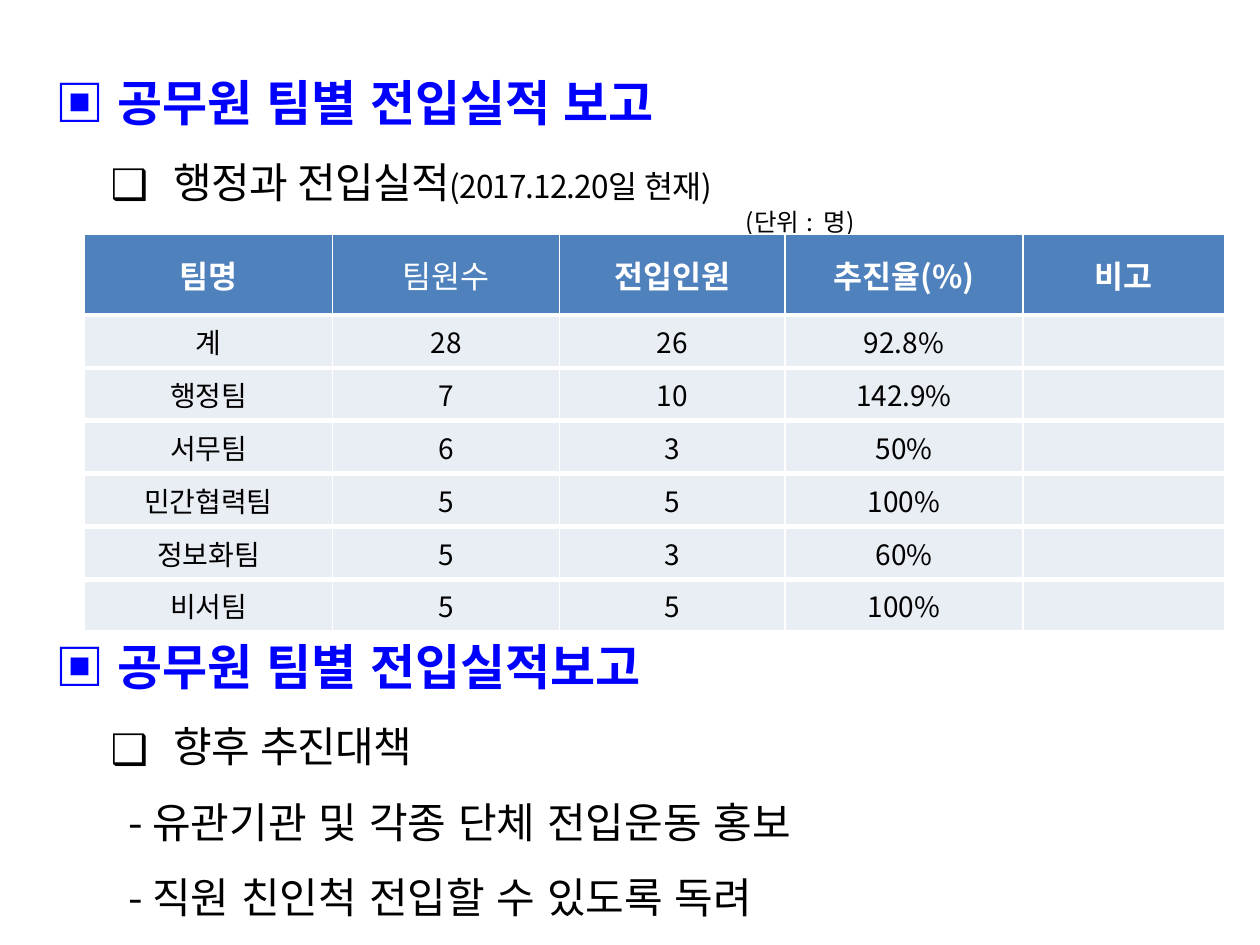
from lxml import etree
from pptx import Presentation
from pptx.dml.color import RGBColor
from pptx.enum.lang import MSO_LANGUAGE_ID
from pptx.enum.text import MSO_ANCHOR, PP_ALIGN
from pptx.oxml.ns import qn
from pptx.util import Inches, Pt

MIDDLE, CENTER = MSO_ANCHOR.MIDDLE, PP_ALIGN.CENTER
KOREAN = MSO_LANGUAGE_ID.KOREAN
FONT = "Noto Sans CJK KR"
COLORS = {"heading": "0000FF", "text": "000000", "white": "FFFFFF",
          "header": "4F81BD", "row": "E9EDF4"}

COL_WIDTHS = [1.97, 1.8, 1.79, 1.89, 1.6]
ROW_HEIGHTS = [0.64] + [0.42] * 6
ROWS = [
    ["팀명", "팀원수", "전입인원", "추진율(%)", "비고"],
    ["계", "28", "26", "92.8%", ""],
    ["행정팀", "7", "10", "142.9%", ""],
    ["서무팀", "6", "3", "50%", ""],
    ["민간협력팀", "5", "5", "100%", ""],
    ["정보화팀", "5", "3", "60%", ""],
    ["비서팀", "5", "5", "100%", ""],
]


def add_run(p, text, size, color="text", bold=False, spacing=None):
    r = p.add_run()
    r.text = text
    r.font.size, r.font.bold, r.font.name = Pt(size), bold, FONT
    r.font.language_id = KOREAN
    r.font.color.rgb = RGBColor.from_string(COLORS[color])
    rPr = r._r.get_or_add_rPr()
    etree.SubElement(rPr, qn("a:ea")).set("typeface", FONT)
    if spacing is not None:
        rPr.set("spc", str(spacing))


def add_paragraph(tf, left, hang=0, bullet=None, line=1.5, before=0):
    p = tf.paragraphs[0] if not tf.paragraphs[0].runs else tf.add_paragraph()
    p.line_spacing, p.space_before = line, Pt(before)
    pPr = p._p.get_or_add_pPr()
    pPr.set("marL", str(Inches(left)))
    pPr.set("indent", str(-Inches(hang)))
    if bullet:
        etree.SubElement(pPr, qn("a:buFont")).set("typeface", FONT)
        etree.SubElement(pPr, qn("a:buChar")).set("char", bullet)
    else:
        etree.SubElement(pPr, qn("a:buNone"))
    return p


def add_section(s, left, top, width, height, heading, subheading):
    """Heading and boxed-bullet subheading; returns the frame and last paragraph."""
    tf = s.shapes.add_textbox(Inches(left), Inches(top),
                              Inches(width), Inches(height)).text_frame
    tf.word_wrap = True
    add_run(add_paragraph(tf, 0.56, 0.5, before=5.6), "▣ " + heading, 28, "heading", True)
    p = add_paragraph(tf, 1, 0.5, "❑")
    add_run(p, subheading, 24, spacing=-50)
    return tf, p


def add_results(s, left, top, width, height):
    tf, p = add_section(s, left, top, width, height,
                        "공무원 팀별 전입실적 보고", "행정과 전입실적")
    add_run(p, "(2017.12.20일 현재)", 18, spacing=-50)
    add_run(add_paragraph(tf, 5.54, line=1.0), "(단위 :  명)", 14)


def add_plans(s, left, top, width, height):
    tf, _ = add_section(s, left, top, width, height,
                        "공무원 팀별 전입실적보고", "향후 추진대책")
    for plan in ("유관기관 및 각종 단체 전입운동 홍보", "직원 친인척 전입할 수 있도록 독려"):
        add_run(add_paragraph(tf, 0.64), "- " + plan, 24)


def set_borders(cell, header):
    tcPr = cell._tc.get_or_add_tcPr()
    widths = {"a:lnL": 1, "a:lnR": 1, "a:lnT": 1 if header else 3, "a:lnB": 3}
    for i, (tag, width) in enumerate(widths.items()):
        ln = etree.Element(qn(tag), w=str(Pt(width)))
        fill = etree.SubElement(ln, qn("a:solidFill"))
        etree.SubElement(fill, qn("a:srgbClr")).set("val", COLORS["white"])
        tcPr.insert(i, ln)


def add_team_table(s, left, top):
    table = s.shapes.add_table(len(ROWS), len(COL_WIDTHS), Inches(left), Inches(top),
                               Inches(sum(COL_WIDTHS)), Inches(sum(ROW_HEIGHTS))).table
    for col, width in zip(table.columns, COL_WIDTHS):
        col.width = Inches(width)
    for i, (row, height) in enumerate(zip(ROWS, ROW_HEIGHTS)):
        table.rows[i].height = Inches(height)
        header = i == 0
        for j, text in enumerate(row):
            cell = table.cell(i, j)
            cell.fill.solid()
            cell.fill.fore_color.rgb = RGBColor.from_string(COLORS["header" if header else "row"])
            cell.vertical_anchor = MIDDLE
            set_borders(cell, header)
            p = cell.text_frame.paragraphs[0]
            p.alignment = CENTER
            if header:
                add_run(p, text, 18, "white", bold=j != 1)
            elif text:
                add_run(p, text, 16)
            else:  # keeps empty cells as low as filled ones
                etree.SubElement(p._p, qn("a:endParaRPr")).set("sz", "1600")


def main():
    prs = Presentation()
    prs.slide_width, prs.slide_height = Inches(10), Inches(7.5)
    s = prs.slides.add_slide(prs.slide_layouts[6])
    add_plans(s, 0.28, 4.77, 9.88, 2.05)
    add_results(s, 0.28, 0.29, 9.88, 5.91)
    add_team_table(s, 0.67, 1.86)
    prs.save("out.pptx")


if __name__ == "__main__":
    main()
